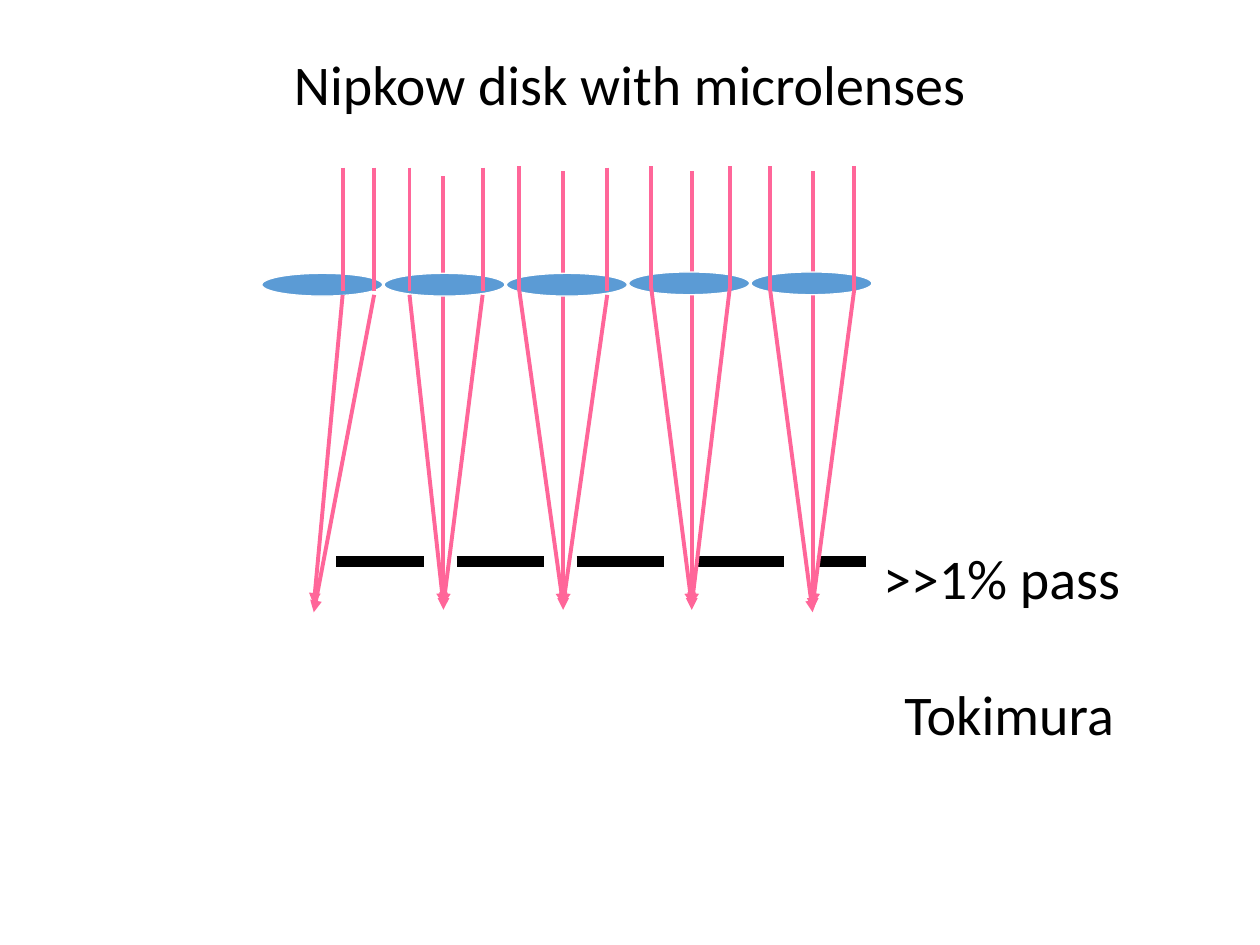
from lxml import etree
from pptx import Presentation
from pptx.dml.color import RGBColor
from pptx.enum.dml import MSO_LINE
from pptx.enum.shapes import MSO_CONNECTOR, MSO_SHAPE
from pptx.enum.text import MSO_ANCHOR, MSO_AUTO_SIZE, PP_ALIGN
from pptx.oxml.ns import qn
from pptx.util import Pt

STRAIGHT, ELLIPSE = MSO_CONNECTOR.STRAIGHT, MSO_SHAPE.OVAL
LONG_DASH = MSO_LINE.LONG_DASH
MIDDLE, TOP = MSO_ANCHOR.MIDDLE, MSO_ANCHOR.TOP
FIT, CENTER = MSO_AUTO_SIZE.SHAPE_TO_FIT_TEXT, PP_ALIGN.CENTER

BLACK = RGBColor(0x00, 0x00, 0x00)
WHITE = RGBColor(0xFF, 0xFF, 0xFF)
PINK = RGBColor(0xFF, 0x66, 0x99)
BLUE = RGBColor(0x5B, 0x9B, 0xD5)

# text, (left, top, width, height), is title
TEXTS = [
    (">>1% pass", (496.8, 306.7, 151.2, 46.1), False),
    ("Tokimura", (504.7, 384.5, 144, 46.1), False),
    ("Nipkow disk with microlenses", (49.7, 28.8, 620.6, 104.4), True),
]

# Ray heights: entry above the lens, end of the straight part, start of the bent part
OUTER = (95.8, 166.3, 168.5)
INNER = (95, 165, 165)
TIP, LOW_TIP, AXIS_TIP = 345.6, 349.9, 348.5

# Each lens: focus x, top of lens, top of axis ray, side rays (x, heights, tip)
LENSES = [
    (179.3, 156.2, None, [(213.8, OUTER, LOW_TIP), (195.8, OUTER, TIP)]),
    (253.4, 156.2, 100.8, [(234, OUTER, TIP), (275.8, OUTER, TIP)]),
    (321.8, 156.2, 97.9, [(296.6, INNER, TIP), (347, OUTER, TIP)]),
    (395.3, 155.4, 97.9, [(372.2, INNER, TIP), (417, INNER, TIP)]),
    (464.4, 155.4, 97.9, [(440, INNER, LOW_TIP), (488.2, INNER, TIP)]),
]
LENS_LEFT, LENS_PITCH = 149.6, 69.9
LENS_WIDTH, LENS_HEIGHT = 69.1, 13
DISK_LEFT, DISK_RIGHT, DISK_Y = 192.3, 494.6, 321


def add_line(slide, start, end, color=PINK, width=2.25, arrow=False):
    line = slide.shapes.add_connector(STRAIGHT, *map(Pt, start + end))
    line.line.color.rgb = color
    line.line.width = Pt(width)
    if arrow:
        outline = line.line._get_or_add_ln()
        etree.SubElement(outline, qn("a:tailEnd"), type="triangle")
    etree.SubElement(line._element.spPr, qn("a:effectLst"))
    return line


def add_lens(slide, left, top):
    lens = slide.shapes.add_shape(
        ELLIPSE, *map(Pt, (left, top, LENS_WIDTH, LENS_HEIGHT)))
    lens.shadow.inherit = False
    lens.fill.solid()
    lens.fill.fore_color.rgb = BLUE
    lens.line.color.rgb = WHITE
    lens.line.width = Pt(0.75)


def add_text(slide, text, place, is_title):
    frame = slide.shapes.add_textbox(*map(Pt, place)).text_frame
    frame.word_wrap = is_title
    frame.vertical_anchor = TOP if is_title else MIDDLE
    if not is_title:
        frame.auto_size = FIT
    para = frame.paragraphs[0]
    para.text = text
    para.alignment = CENTER
    if is_title:
        para.line_spacing = 0.9
    for name, value in {"name": "Calibri", "size": Pt(32)}.items():
        setattr(para.font, name, value)
    para.font.color.rgb = BLACK


def main():
    deck = Presentation()
    deck.slide_width, deck.slide_height = Pt(720), Pt(540)
    slide = deck.slides.add_slide(deck.slide_layouts[6])

    disk = add_line(slide, (DISK_LEFT, DISK_Y), (DISK_RIGHT, DISK_Y), BLACK, 6.25)
    disk.line.dash_style = LONG_DASH

    for focus, _, axis_top, _ in LENSES:
        if axis_top is not None:
            add_line(slide, (focus, axis_top), (focus, AXIS_TIP), arrow=True)
    for index, (_, lens_top, _, _) in enumerate(LENSES):
        add_lens(slide, LENS_LEFT + index * LENS_PITCH, lens_top)
    for focus, _, _, rays in LENSES:
        for x, (entry, straight_end, bend), tip in rays:
            add_line(slide, (x, entry), (x, straight_end))
            add_line(slide, (x, bend), (focus, tip), arrow=True)

    for text, place, is_title in TEXTS:
        add_text(slide, text, place, is_title)
    deck.save("out.pptx")


if __name__ == "__main__":
    main()
